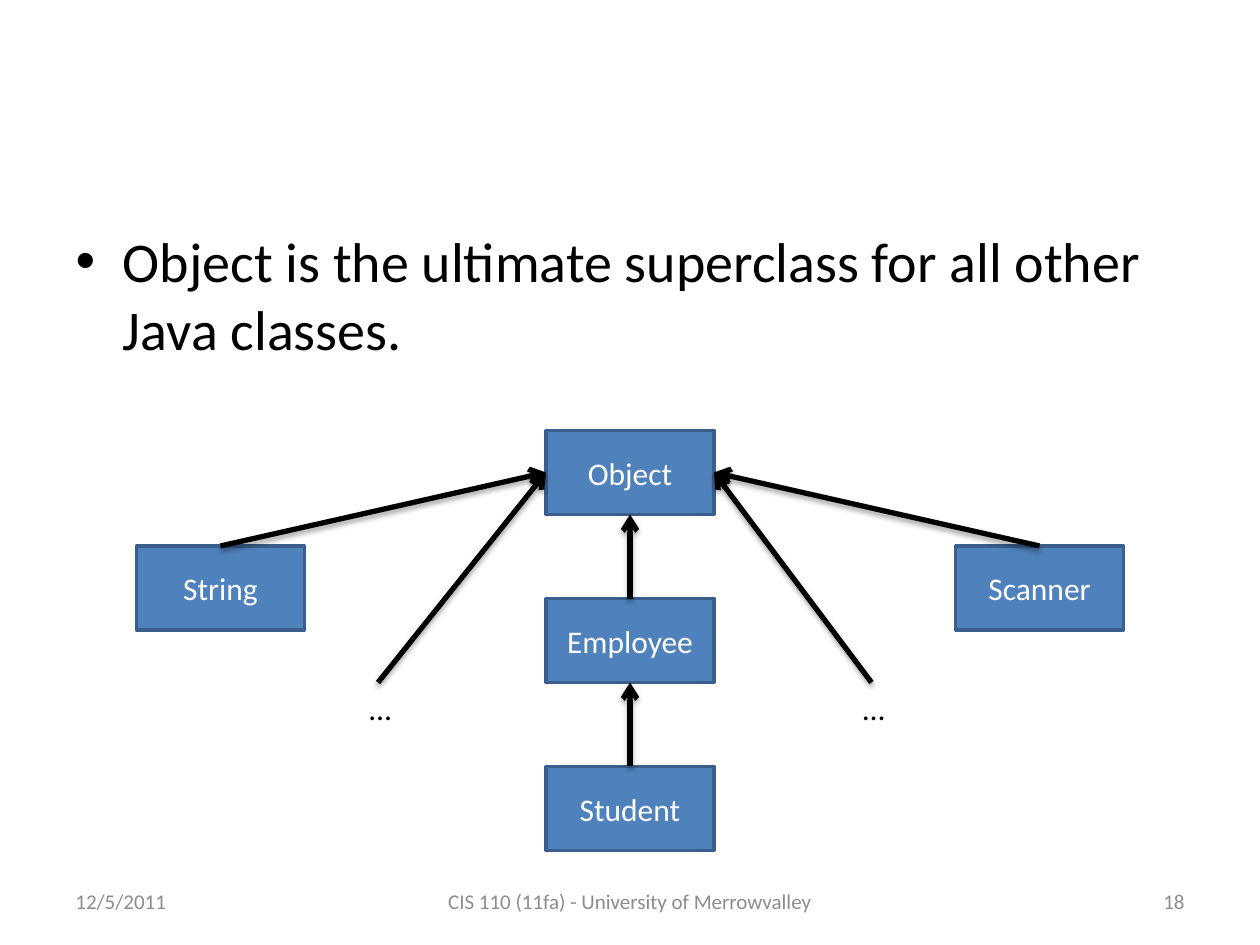
from dataclasses import dataclass
from typing import NamedTuple, Optional

from lxml.etree import SubElement
from pptx import Presentation
from pptx.dml.color import RGBColor
from pptx.enum.shapes import MSO_CONNECTOR, MSO_SHAPE
from pptx.enum.text import MSO_ANCHOR, PP_ALIGN
from pptx.oxml.ns import qn
from pptx.shapes.autoshape import Shape
from pptx.slide import Slide
from pptx.util import Pt


@dataclass(frozen=True)
class Theme:
    font: str = "Calibri"
    black: RGBColor = RGBColor(0x00, 0x00, 0x00)
    white: RGBColor = RGBColor(0xFF, 0xFF, 0xFF)
    grey: RGBColor = RGBColor(0x8C, 0x8C, 0x8C)
    box_fill: RGBColor = RGBColor(0x4F, 0x81, 0xBD)
    box_line: RGBColor = RGBColor(0x3A, 0x5F, 0x8C)
    body_size: int = 32
    diagram_size: int = 18
    footer_size: int = 12


class ClassBox(NamedTuple):
    name: str
    left: float
    top: float


class Label(NamedTuple):
    text: str
    left: float
    top: float
    width: float
    align: PP_ALIGN


class Inheritance(NamedTuple):
    child: str
    child_site: int
    parent: str
    parent_site: int


class OpenArrow(NamedTuple):
    """An arrow that starts above an ellipsis instead of at a box."""
    start_x: float
    start_y: float
    parent_site: int


THEME = Theme()
BOX_WIDTH, BOX_HEIGHT = 96, 48
LABEL_HEIGHT = 28.8
TOP, LEFT, BOTTOM, RIGHT = range(4)  # connection sites of a rectangle

# Class boxes: a central column with equal steps, and one box on each side
COLUMN_LEFT, COLUMN_TOP, COLUMN_STEP = 312, 246, 96
SIDE_OFFSET, SIDE_TOP = 234, 312
COLUMN = ["Object", "Employee", "Student"]
BOXES = [ClassBox(name, COLUMN_LEFT, COLUMN_TOP + row * COLUMN_STEP)
         for row, name in enumerate(COLUMN)] + [
    ClassBox("String", COLUMN_LEFT - SIDE_OFFSET, SIDE_TOP),
    ClassBox("Scanner", COLUMN_LEFT + SIDE_OFFSET, SIDE_TOP),
]
INHERITANCES = [
    Inheritance("Student", TOP, "Employee", BOTTOM),
    Inheritance("Employee", TOP, "Object", BOTTOM),
    Inheritance("String", TOP, "Object", LEFT),
    Inheritance("Scanner", TOP, "Object", RIGHT),
]
ELLIPSIS_TOP = 390
OPEN_ARROWS = [OpenArrow(216, ELLIPSIS_TOP, LEFT), OpenArrow(498, ELLIPSIS_TOP, RIGHT)]
ELLIPSES = [Label("…", left, ELLIPSIS_TOP, 27, PP_ALIGN.LEFT) for left in (204, 486)]
FOOTERS = [
    Label("12/5/2011", 36, 500.5, 168, PP_ALIGN.LEFT),
    Label("CIS 110 (11fa) - University of Merrowvalley", 246, 500.5, 228, PP_ALIGN.CENTER),
    Label("18", 516, 500.5, 168, PP_ALIGN.RIGHT),
]


def format_text(shape: Shape, size: int, color: RGBColor) -> None:
    for paragraph in shape.text_frame.paragraphs:
        for run in paragraph.runs:
            run.font.name = THEME.font
            run.font.size = Pt(size)
            run.font.color.rgb = color


def add_label(slide: Slide, label: Label, size: int, color: RGBColor,
              anchor: MSO_ANCHOR, wrap: bool) -> None:
    shape = slide.shapes.add_textbox(Pt(label.left), Pt(label.top),
                                     Pt(label.width), Pt(LABEL_HEIGHT))
    text_frame = shape.text_frame
    text_frame.text = label.text
    text_frame.word_wrap = wrap
    text_frame.vertical_anchor = anchor
    text_frame.paragraphs[0].alignment = label.align
    format_text(shape, size, color)


def add_class_box(slide: Slide, box: ClassBox) -> Shape:
    shape = slide.shapes.add_shape(MSO_SHAPE.RECTANGLE, Pt(box.left), Pt(box.top),
                                   Pt(BOX_WIDTH), Pt(BOX_HEIGHT))
    shape.shadow.inherit = False
    shape.fill.solid()
    shape.fill.fore_color.rgb = THEME.box_fill
    shape.line.color.rgb = THEME.box_line
    shape.line.width = Pt(2)
    shape.text_frame.text = box.name
    shape.text_frame.vertical_anchor = MSO_ANCHOR.MIDDLE
    shape.text_frame.paragraphs[0].alignment = PP_ALIGN.CENTER
    format_text(shape, THEME.diagram_size, THEME.white)
    return shape


def add_arrow(slide: Slide, parent: Shape, parent_site: int,
              child: Optional[Shape] = None, child_site: int = TOP,
              start_x: float = 0, start_y: float = 0) -> None:
    arrow = slide.shapes.add_connector(MSO_CONNECTOR.STRAIGHT, Pt(start_x), Pt(start_y),
                                       Pt(start_x), Pt(start_y))
    if child is not None:
        arrow.begin_connect(child, child_site)
    arrow.end_connect(parent, parent_site)
    arrow.line.color.rgb = THEME.black
    arrow.line.width = Pt(3)

    # Arrowhead and soft shadow below the line
    properties = arrow.line._get_or_add_ln().getparent()
    SubElement(properties.find(qn("a:ln")), qn("a:tailEnd"), type="arrow")
    effects = SubElement(properties, qn("a:effectLst"))
    shadow = SubElement(effects, qn("a:outerShdw"), blurRad=str(Pt(3.1)),
                        dist=str(Pt(1.8)), dir="5400000", rotWithShape="0")
    shadow_color = SubElement(shadow, qn("a:srgbClr"), val=str(THEME.black))
    SubElement(shadow_color, qn("a:alpha"), val="35000")


def main() -> None:
    presentation = Presentation()
    presentation.slide_width, presentation.slide_height = Pt(720), Pt(540)
    slide = presentation.slides.add_slide(presentation.slide_layouts[1])

    # The slide shows no title, so its empty placeholder goes
    title = slide.shapes.title.element
    title.getparent().remove(title)

    # Bullet text
    body = slide.placeholders[1]
    body.left, body.top, body.width, body.height = Pt(36), Pt(126), Pt(648), Pt(356.4)
    body.text_frame.text = "Object is the ultimate superclass for all other Java classes."
    format_text(body, THEME.body_size, THEME.black)

    # Footer line
    for footer in FOOTERS:
        add_label(slide, footer, THEME.footer_size, THEME.grey, MSO_ANCHOR.MIDDLE, True)

    # Class hierarchy
    boxes = {box.name: add_class_box(slide, box) for box in BOXES}
    for link in INHERITANCES:
        add_arrow(slide, boxes[link.parent], link.parent_site,
                  boxes[link.child], link.child_site)
    for arrow in OPEN_ARROWS:
        add_arrow(slide, boxes["Object"], arrow.parent_site,
                  start_x=arrow.start_x, start_y=arrow.start_y)
    for ellipsis in ELLIPSES:
        add_label(slide, ellipsis, THEME.diagram_size, THEME.black, MSO_ANCHOR.TOP, False)

    presentation.save("out.pptx")


if __name__ == "__main__":
    main()
